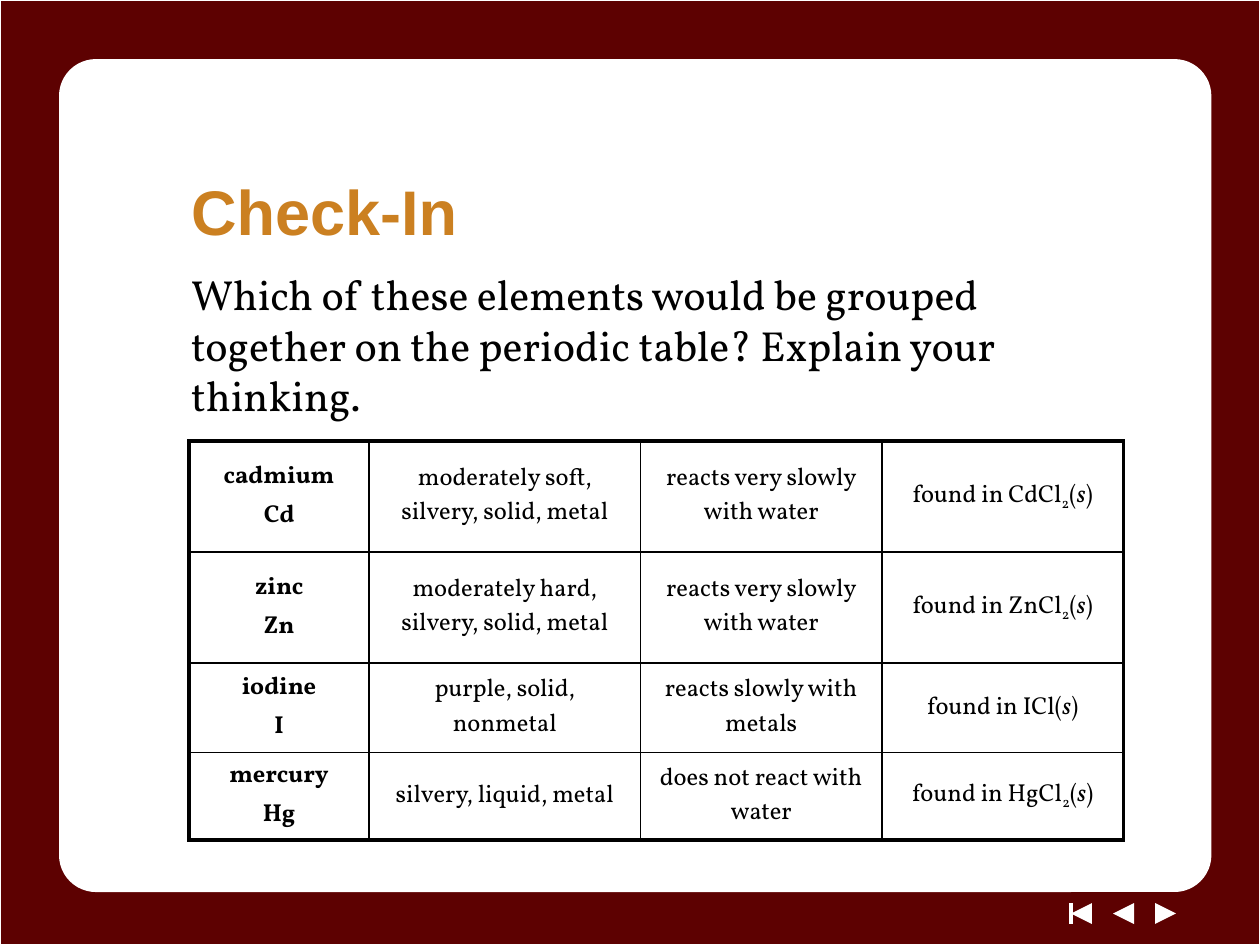
from lxml import etree
from pptx import Presentation
from pptx.dml.color import RGBColor
from pptx.enum import shapes, text
from pptx.oxml import ns
from pptx.util import Pt

MAROON = RGBColor(0x5D, 0x01, 0x01)
WHITE = RGBColor(0xFF, 0xFF, 0xFF)
BLACK = RGBColor(0x00, 0x00, 0x00)
OCHRE = RGBColor(0xCB, 0x80, 0x21)
SERIF = "Vollkorn"
THIN, THICK = 1, 2.25

QUESTION = ("Which of these elements would be grouped together on the "
            "periodic table? Explain your thinking.")
COLUMN_WIDTHS = [103, 155, 138, 138]
ROW_HEIGHTS = [63.5, 63.5, 51, 50]
ELEMENTS = [
    ("cadmium", "Cd", "moderately soft, silvery, solid, metal",
     "reacts very slowly with water", "CdCl", "2"),
    ("zinc", "Zn", "moderately hard, silvery, solid, metal",
     "reacts very slowly with water", "ZnCl", "2"),
    ("iodine", "I", "purple, solid, nonmetal",
     "reacts slowly with metals", "ICl", ""),
    ("mercury", "Hg", "silvery, liquid, metal",
     "does not react with water", "HgCl", "2"),
]


def add_panel(slide, kind, box, fill, line_width=None, rotation=0):
    panel = slide.shapes.add_shape(kind, *map(Pt, box))
    panel.shadow.inherit = False
    panel.rotation = rotation
    panel.fill.solid()
    panel.fill.fore_color.rgb = fill
    if line_width:
        panel.line.color.rgb = WHITE
        panel.line.width = Pt(line_width)
    else:
        panel.line.fill.background()
    return panel


def add_frame(slide):
    add_panel(slide, shapes.MSO_SHAPE.RECTANGLE, (0, 0, 720, 540), MAROON, 0.75)
    page = add_panel(slide, shapes.MSO_SHAPE.ROUNDED_RECTANGLE,
                     (36, 36, 654, 471.5), WHITE, 4.5)
    page.adjustments[0] = 0.04


def add_navigation(slide):
    for left, rotation in ((660, 90), (636, 270), (612, 270)):
        add_panel(slide, shapes.MSO_SHAPE.ISOSCELES_TRIANGLE,
                  (left, 516, 12, 12), WHITE, rotation=rotation)
    bar = slide.shapes.add_connector(shapes.MSO_CONNECTOR.STRAIGHT,
                                     Pt(612), Pt(516), Pt(612), Pt(528))
    bar.line.color.rgb = WHITE
    bar.line.width = Pt(2)
    etree.SubElement(bar._element.spPr, ns.qn("a:effectLst"))


def style_paragraph(paragraph, size, font, color, bold=False):
    paragraph.font.size = Pt(size)
    paragraph.font.name = font
    paragraph.font.color.rgb = color
    paragraph.font.bold = bold


def fill_placeholder(slide, placeholder, box, content, anchor):
    slide.shapes._spTree.append(placeholder._element)
    placeholder.left, placeholder.top, placeholder.width, placeholder.height = map(Pt, box)
    frame = placeholder.text_frame
    frame.text = content
    frame.word_wrap = True
    frame.auto_size = text.MSO_AUTO_SIZE.NONE
    frame.vertical_anchor = anchor
    paragraph = frame.paragraphs[0]
    paragraph.alignment = text.PP_ALIGN.LEFT
    return paragraph


def add_heading(slide):
    heading = fill_placeholder(slide, slide.shapes.title, (102, 84, 582, 72),
                               "Check-In", text.MSO_ANCHOR.MIDDLE)
    style_paragraph(heading, 36, "Arial", OCHRE, bold=True)


def add_question(slide):
    question = fill_placeholder(slide, slide.placeholders[1], (102, 150, 528, 312),
                                QUESTION, text.MSO_ANCHOR.TOP)
    style_paragraph(question, 24, SERIF, BLACK)
    question.space_before = Pt(4.8)
    properties = question._p.get_or_add_pPr()
    properties.set("marL", "0")
    properties.set("indent", "0")
    properties.insert_element_before(
        properties.makeelement(ns.qn("a:buNone")), "a:tabLst", "a:defRPr", "a:extLst")


def set_borders(cell, widths):
    properties = cell._tc.get_or_add_tcPr()
    for side, width in widths.items():
        border = etree.SubElement(properties, ns.qn(f"a:ln{side}"), w=str(Pt(width)))
        fill = etree.SubElement(border, ns.qn("a:solidFill"))
        etree.SubElement(fill, ns.qn("a:srgbClr"), val=str(BLACK))


def write_cell(cell, lines, bold=False):
    cell.text = "\n".join(lines)
    cell.vertical_anchor = text.MSO_ANCHOR.MIDDLE
    for paragraph in cell.text_frame.paragraphs:
        style_paragraph(paragraph, 14, SERIF, BLACK, bold)
        paragraph.alignment = text.PP_ALIGN.CENTER
        paragraph.space_before = Pt(2.8)


def write_compound(cell, formula, count):
    write_cell(cell, [f"found in {formula}"])
    paragraph = cell.text_frame.paragraphs[0]
    if count:
        subscript = paragraph.add_run()
        subscript.text = count
        subscript.font._element.set("baseline", "-25000")
    for part in ("(", "s", ")"):
        run = paragraph.add_run()
        run.text = part
        if part == "s":
            run.font.italic = True


def add_element_table(slide):
    rows, columns = len(ROW_HEIGHTS), len(COLUMN_WIDTHS)
    table = slide.shapes.add_table(rows, columns, Pt(108), Pt(252),
                                   Pt(sum(COLUMN_WIDTHS)), Pt(sum(ROW_HEIGHTS))).table
    table.first_row = table.horz_banding = False
    for column, width in zip(table.columns, COLUMN_WIDTHS):
        column.width = Pt(width)
    for r, (name, symbol, look, reaction, formula, count) in enumerate(ELEMENTS):
        table.rows[r].height = Pt(ROW_HEIGHTS[r])
        write_cell(table.cell(r, 0), [name, symbol], bold=True)
        write_cell(table.cell(r, 1), [look])
        write_cell(table.cell(r, 2), [reaction])
        write_compound(table.cell(r, 3), formula, count)
        for c in range(columns):
            outer = {"L": c == 0, "R": c == columns - 1, "T": r == 0, "B": r == rows - 1}
            set_borders(table.cell(r, c),
                        {side: THICK if edge else THIN for side, edge in outer.items()})
            table.cell(r, c).fill.background()


def main():
    deck = Presentation()
    deck.slide_width, deck.slide_height = Pt(720), Pt(540)
    slide = deck.slides.add_slide(deck.slide_layouts[1])
    add_frame(slide)
    add_navigation(slide)
    add_heading(slide)
    add_question(slide)
    add_element_table(slide)
    deck.save("out.pptx")


if __name__ == "__main__":
    main()
